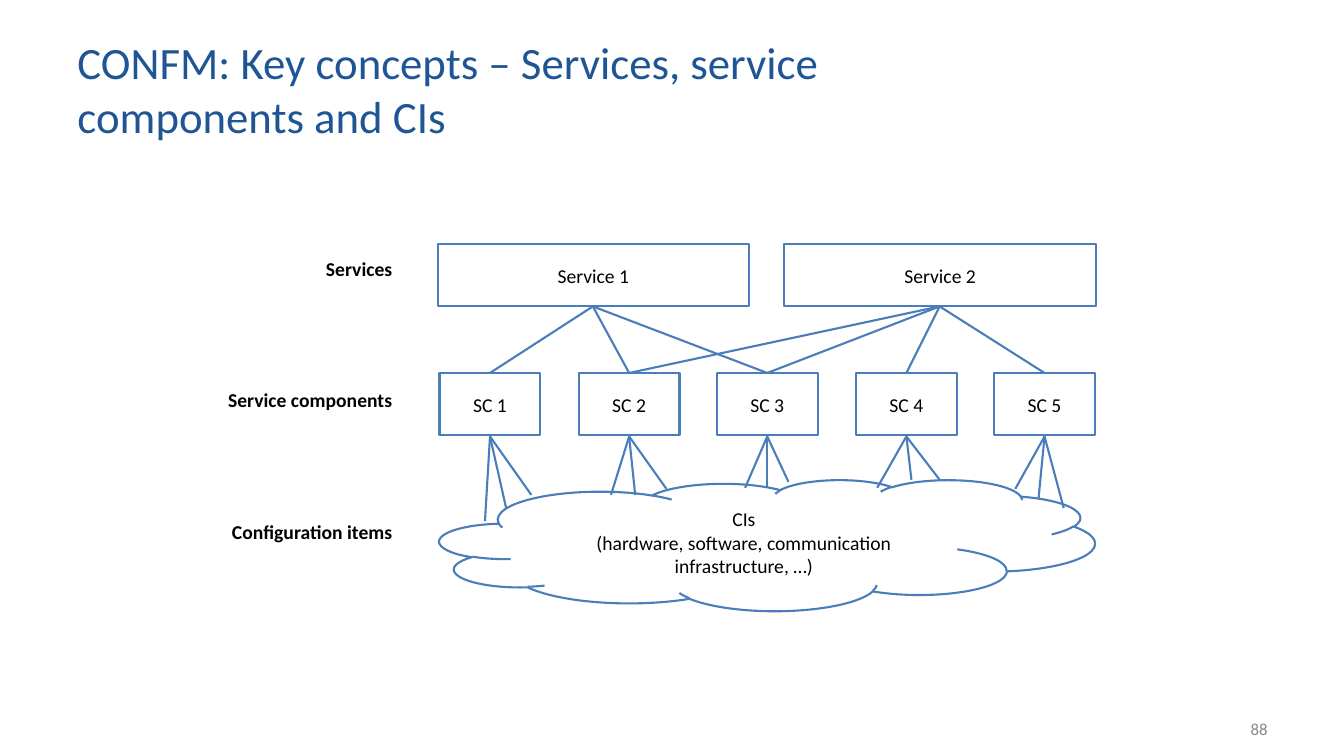
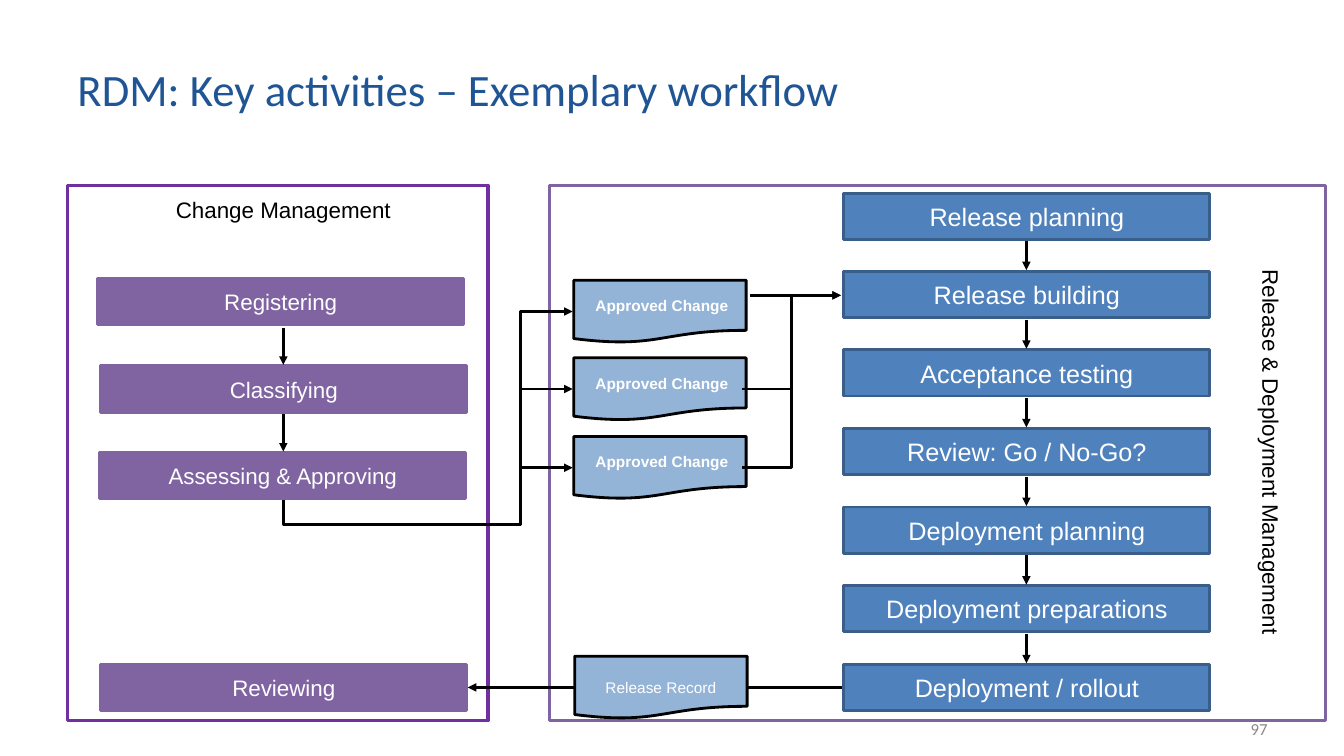
from pptx import Presentation
from pptx import util as u
from pptx.dml.color import RGBColor
from pptx.enum import shapes, text
from pptx.oxml import ns, xmlchemy

PX = 9144
COLORS = {
    "title": "205595",
    "number": "888888",
    "outline": "4A7DBA",
    "black": "000000",
    "white": "FFFFFF",
    "violet": "7030A0",
    "purple": "8064A2",
    "blue": "4F81BD",
    "navy": "395E89",
    "sky": "93B3D7",
}
SHAPE = shapes.MSO_SHAPE
ALIGN = text.PP_ALIGN
ANCHOR = text.MSO_ANCHOR
WIDE = (10, 5, 10, 5)
TIGHT = (0, 0, 0, 0)


def px(value):
    return u.Emu(round(value * PX))


def rgb(name):
    return RGBColor.from_string(COLORS[name])


def write_text(shape, content, font="Calibri", size=14, color="black", bold=False,
               align=ALIGN.CENTER, anchor=ANCHOR.MIDDLE, insets=WIDE):
    frame = shape.text_frame
    frame.word_wrap = True
    frame.vertical_anchor = anchor
    (frame.margin_left, frame.margin_top,
     frame.margin_right, frame.margin_bottom) = map(px, insets)
    for index, line in enumerate(content.split("\n")):
        para = frame.add_paragraph() if index else frame.paragraphs[0]
        para.alignment = align
        span = para.add_run()
        span.text = line
        span.font.name = font
        span.font.size = u.Pt(size)
        span.font.bold = bold
        span.font.color.rgb = rgb(color)


def add_label(page, content, left, top, width, height, rotation=0, **style):
    box = page.shapes.add_textbox(*map(px, (left, top, width, height)))
    box.rotation = rotation
    write_text(box, content, **style)


def style_line(line, color, weight, arrow=False):
    line.color.rgb = rgb(color)
    line.width = u.Pt(weight)
    if arrow:
        tail = xmlchemy.OxmlElement("a:tailEnd")
        tail.set("type", "triangle")
        line._get_or_add_ln().append(tail)


def add_box(page, left, top, width, height, line, weight=2, fill=None,
            kind=SHAPE.RECTANGLE, content=None, **style):
    box = page.shapes.add_shape(kind, *map(px, (left, top, width, height)))
    box.shadow.inherit = False
    if fill:
        box.fill.solid()
        box.fill.fore_color.rgb = rgb(fill)
    else:
        box.fill.background()
    style_line(box.line, line, weight)
    if content:
        write_text(box, content, **style)


def add_line(page, start, end, color="black", weight=2, arrow=False):
    line = page.shapes.add_connector(
        shapes.MSO_CONNECTOR.STRAIGHT, *map(px, (*start, *end)))
    style_line(line.line, color, weight, arrow)
    line._element.find(ns.qn("p:spPr")).append(xmlchemy.OxmlElement("a:effectLst"))


def add_route(page, points):
    builder = page.shapes.build_freeform(*points[0], scale=PX)
    builder.add_line_segments(points[1:], close=False)
    route = builder.convert_to_shape()
    route.shadow.inherit = False
    route.fill.background()
    style_line(route.line, "black", 2, arrow=True)


def add_document(page, left, top, content, **style):
    add_box(page, left, top, 171, 62, "black", fill="sky", kind=SHAPE.FLOWCHART_DOCUMENT,
            content=content, font="Arial", size=11, color="white", **style)


def add_page(deck, title, number):
    page = deck.slides.add_slide(deck.slide_layouts[6])
    add_label(page, title, 67, 30, 985, 115, size=32, color="title", align=ALIGN.LEFT)
    add_label(page, number, 956, 703, 311, 40, size=12, color="number", align=ALIGN.RIGHT)
    return page


def build_concepts(deck):
    page = add_page(
        deck, "CONFM: Key concepts – Services, service components and CIs", "88")
    outline = {"line": "outline", "weight": 1.5}
    add_box(page, 436, 476, 650, 130, kind=SHAPE.CLOUD, **outline,
            content="CIs\n(hardware, software, communication infrastructure, …)")

    components = [436 + (index * 275 + 1) // 2 for index in range(5)]
    for index, left in enumerate(components, 1):
        add_box(page, left, 370, 100, 62, content=f"SC {index}", **outline)

    services = [("Service 1", 434, (0, 1, 2)), ("Service 2", 778, (1, 2, 3, 4))]
    for name, left, used in services:
        add_box(page, left, 242, 309, 62, content=name, **outline)
        for index in used:
            add_line(page, (components[index] + 50, 370), (left + 154, 304), "outline", 1.5)

    item_ends = [
        [(481, 517), (502, 504), (527, 491)],
        [(606, 491), (630, 491), (661, 485)],
        [(739, 484), (761, 484), (782, 478)],
        [(870, 484), (904, 476), (932, 476)],
        [(1007, 485), (1030, 495), (1055, 504)],
    ]
    for left, ends in zip(components, item_ends):
        for end in ends:
            add_line(page, (left + 50, 433), end, "outline", 1.5)

    levels = [("Services", 250), ("Service components", 380), ("Configuration items", 511)]
    for name, top in levels:
        add_label(page, name, 179, top, 220, 34, bold=True,
                  align=ALIGN.RIGHT, anchor=ANCHOR.TOP)


def add_change_steps(page):
    add_box(page, 67, 184, 417, 531, "violet", 2.25)
    add_label(page, "Change Management", 104, 190, 354, 37, font="Arial", size=16,
              anchor=ANCHOR.TOP)
    steps = [("Registering", 97, 276), ("Classifying", 100, 363),
             ("Assessing & Approving", 99, 449), ("Reviewing", 100, 659)]
    for name, left, top in steps:
        add_box(page, left, top, 363, 46, "purple", fill="purple", content=name,
                font="Arial", size=16, color="white", insets=TIGHT)
    for top in (325, 411):
        add_line(page, (281, top), (281, top + 37), arrow=True)


def add_release_steps(page):
    add_box(page, 545, 184, 770, 531, "purple", 2.25)
    add_label(page, "Release & Deployment Management", 1004, 430, 513, 37, rotation=90,
              font="Arial", size=16, anchor=ANCHOR.TOP)
    steps = ["Release planning", "Release building", "Acceptance testing",
             "Review: Go / No-Go?", "Deployment planning",
             "Deployment preparations", "Deployment / rollout"]
    for index, name in enumerate(steps):
        top = 192 + index * 467 // 6
        add_box(page, 837, top, 363, 46, "navy", fill="blue", content=name,
                font="Arial", size=18, color="white", insets=TIGHT)
        if index:
            add_line(page, (1018, top - 30), (1018, top - 1), arrow=True)


def add_handover(page):
    document_tops = (278, 355, 433)
    for top in document_tops:
        add_document(page, 569, top, "Approved Change", bold=True, insets=(4, 0, 0, 0))
    for top in document_tops:
        middle = top + 31
        add_route(page, [(281, 496), (281, 520), (516, 520), (516, middle), (568, middle)])
    for top in document_tops[1:]:
        middle = top + 31
        add_route(page, [(736, middle), (785, middle), (785, 293), (834, 293)])
    add_line(page, (789, 293), (744, 293))
    add_line(page, (835, 682), (464, 682), arrow=True)
    add_document(page, 570, 651, "Release Record", insets=(0, 12, 0, 0))


def build_workflow(deck):
    page = add_page(deck, "RDM: Key activities – Exemplary workflow", "97")
    add_change_steps(page)
    add_release_steps(page)
    add_handover(page)


def main():
    deck = Presentation()
    deck.slide_width = px(1333)
    deck.slide_height = px(750)
    build_concepts(deck)
    build_workflow(deck)
    deck.save("out.pptx")


if __name__ == "__main__":
    main()
